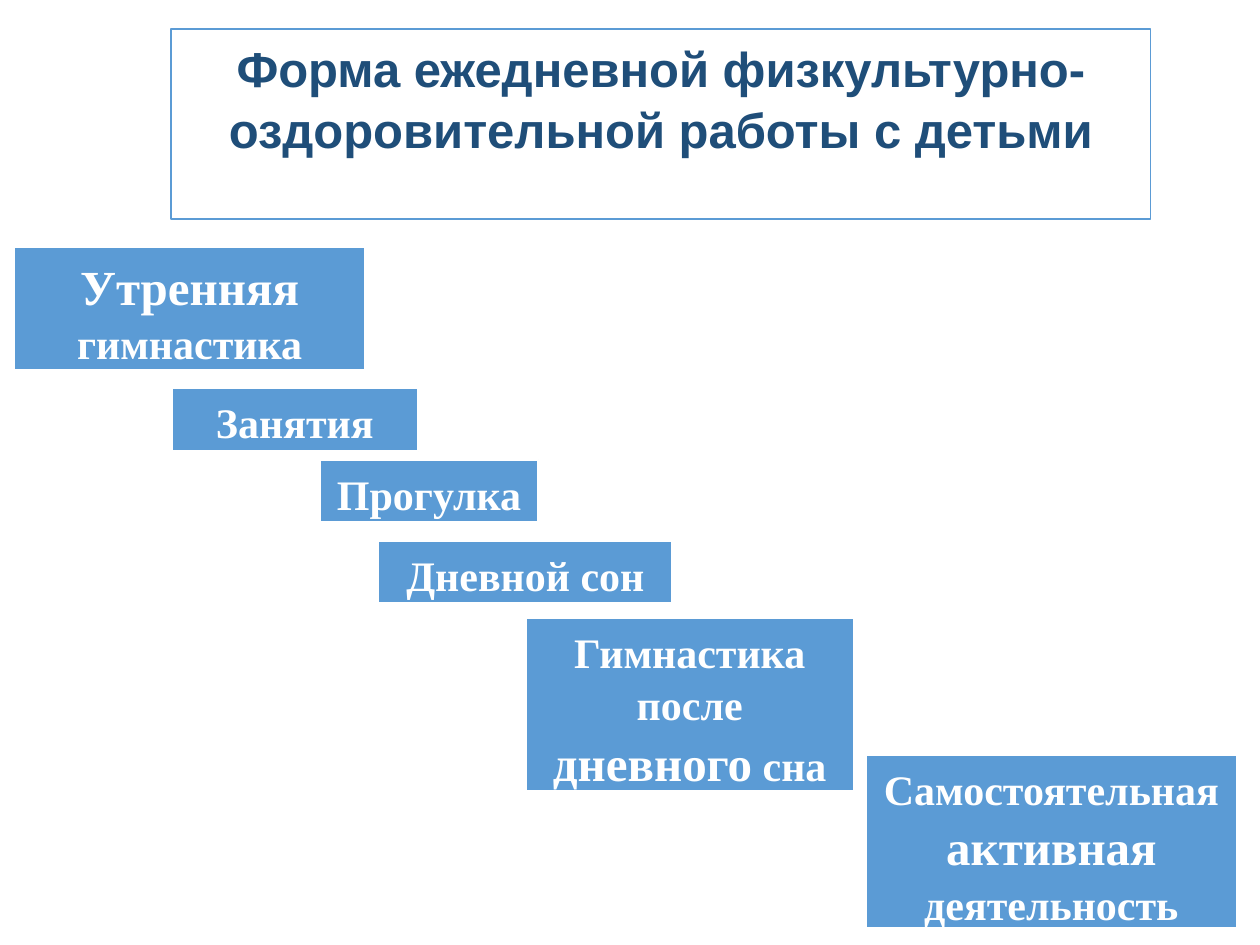
from pptx import Presentation
from pptx.dml.color import RGBColor
from pptx.enum.shapes import MSO_SHAPE
from pptx.enum.text import MSO_ANCHOR, MSO_AUTO_SIZE, PP_ALIGN
from pptx.util import Pt

RECTANGLE = MSO_SHAPE.RECTANGLE
TOP = MSO_ANCHOR.TOP
FIXED_SIZE = MSO_AUTO_SIZE.NONE
CENTER = PP_ALIGN.CENTER

COLORS = {"white": "FFFFFF", "blue": "5B9BD5", "navy": "1F4E79"}
NORMAL, LARGE = 24, 28
LINE_SPACING = 1.05
INSET_X, INSET_Y = 7.2, 3.6

TITLE_BOX = (97.9, 16.5, 559.5, 108.8)
TITLE = [("Форма ежедневной физкультурно-оздоровительной работы с детьми", LARGE)]

STEPS = [
    ((7.9, 141.1, 200.9, 70.5), [("Утренняя", LARGE), (" гимнастика", NORMAL)]),
    ((97.9, 221.8, 141.1, 36), [("Занятия", NORMAL)]),
    ((182.9, 262.8, 124.6, 36), [("Прогулка", NORMAL)]),
    ((216, 308.9, 168.5, 36), [("Дневной сон", NORMAL)]),
    ((300.2, 352.8, 187.9, 99.4),
     [("Гимнастика после ", NORMAL), ("дневного", LARGE), (" сна", NORMAL)]),
    ((494.6, 431.3, 212.4, 99.4),
     [("Самостоятельная ", NORMAL), ("активная", LARGE), (" деятельность", NORMAL)]),
]


def color(name):
    return RGBColor.from_string(COLORS[name])


def format_box(shape, box, runs, fill, line, line_width, font_name, font_color):
    shape.left, shape.top, shape.width, shape.height = map(Pt, box)
    shape.fill.solid()
    shape.fill.fore_color.rgb = color(fill)
    shape.line.color.rgb = color(line)
    shape.line.width = Pt(line_width)

    frame = shape.text_frame
    frame.word_wrap = True
    frame.auto_size = FIXED_SIZE
    frame.vertical_anchor = TOP
    frame.margin_left = frame.margin_right = Pt(INSET_X)
    frame.margin_top = frame.margin_bottom = Pt(INSET_Y)

    paragraph = frame.paragraphs[0]
    paragraph.alignment = CENTER
    paragraph.line_spacing = LINE_SPACING
    for text, size in runs:
        run = paragraph.add_run()
        run.text = text
        run.font.name = font_name
        run.font.size = Pt(size)
        run.font.bold = True
        run.font.color.rgb = color(font_color)


def main():
    presentation = Presentation()
    presentation.slide_width = Pt(720)
    presentation.slide_height = Pt(540)
    slide = presentation.slides.add_slide(presentation.slide_layouts[5])

    format_box(slide.shapes.title, TITLE_BOX, TITLE, "white", "blue", 1, "Arial", "navy")
    for box, runs in STEPS:
        step = slide.shapes.add_shape(RECTANGLE, *map(Pt, box))
        step.shadow.inherit = False
        format_box(step, box, runs, "blue", "white", 1.5, "Times New Roman", "white")

    presentation.save("out.pptx")


if __name__ == "__main__":
    main()
